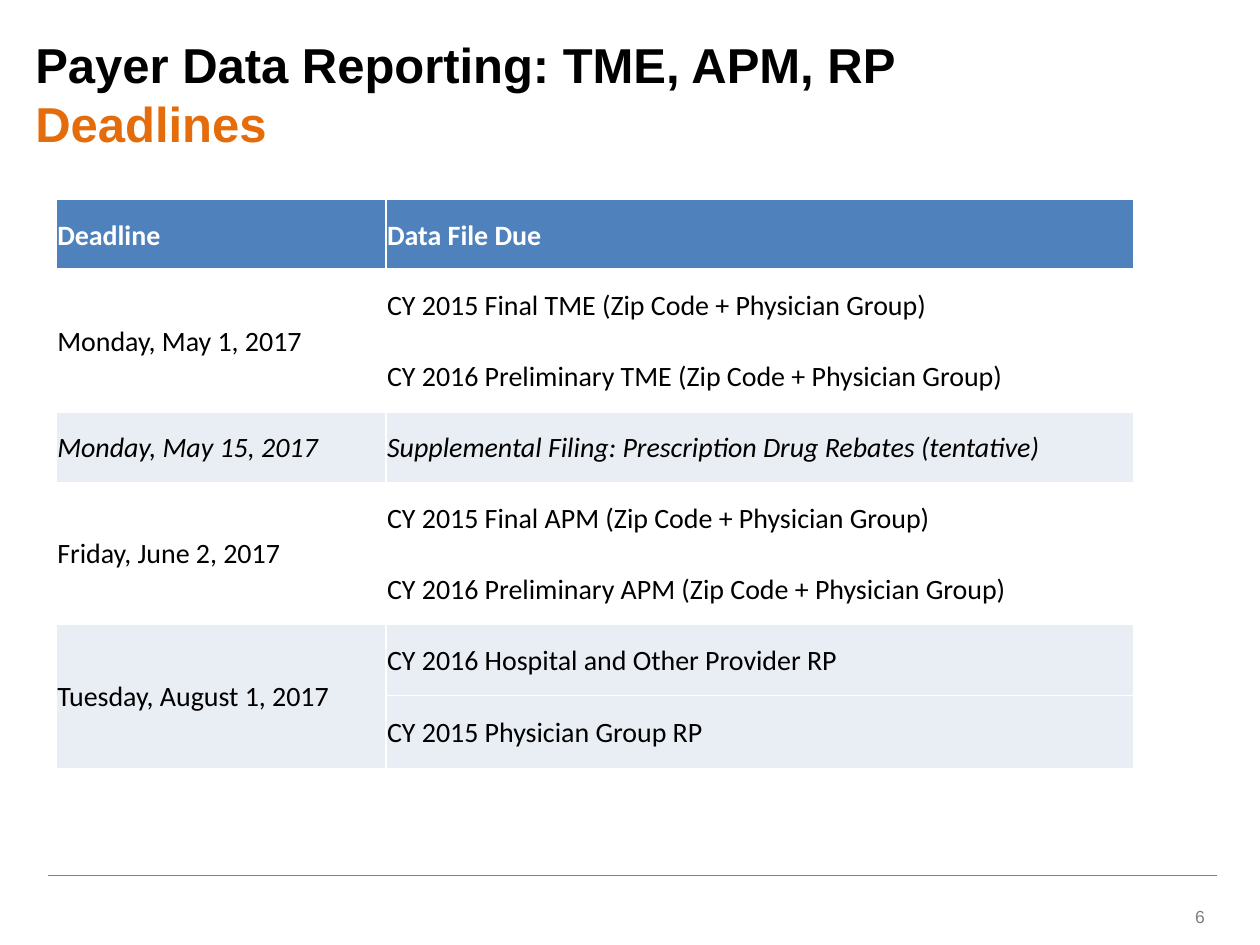
from lxml.etree import SubElement
from pptx import Presentation
from pptx.dml.color import RGBColor
from pptx.enum.shapes import MSO_CONNECTOR
from pptx.enum.text import MSO_ANCHOR, MSO_AUTO_SIZE, PP_ALIGN
from pptx.oxml.ns import qn
from pptx.util import Pt

COLORS = {
    "black": "000000",
    "white": "FFFFFF",
    "orange": "E46C0A",
    "header": "4F81BD",
    "band": "E9EDF4",
    "rule": "808080",
    "number": "7F7F7F",
}

# Each deadline: date, files due, italic
DEADLINES = [
    ("Monday, May 1, 2017",
     ["CY 2015 Final TME (Zip Code + Physician Group)",
      "CY 2016 Preliminary TME (Zip Code + Physician Group)"], False),
    ("Monday, May 15, 2017",
     ["Supplemental Filing: Prescription Drug Rebates (tentative)"], True),
    ("Friday, June 2, 2017",
     ["CY 2015 Final APM (Zip Code + Physician Group)",
      "CY 2016 Preliminary APM (Zip Code + Physician Group)"], False),
    ("Tuesday, August 1, 2017",
     ["CY 2016 Hospital and Other Provider RP",
      "CY 2015 Physician Group RP"], False),
]


def rgb(name):
    return RGBColor.from_string(COLORS[name])


def style_runs(p, font, size, color, bold=False, italic=False):
    for r in p.runs:
        r.font.name, r.font.size = font, Pt(size)
        r.font.bold, r.font.italic = bold, italic
        r.font.color.rgb = rgb(color)


def add_title(s, lines):
    sp = s.shapes.title
    sp.left, sp.top, sp.width, sp.height = Pt(13), Pt(28), Pt(611), Pt(50.5)
    tf = sp.text_frame
    tf.text = "\n".join(text for text, _ in lines)
    tf.word_wrap = True
    tf.auto_size = MSO_AUTO_SIZE.NONE
    tf.vertical_anchor = MSO_ANCHOR.MIDDLE
    for p, (_, color) in zip(tf.paragraphs, lines):
        p.alignment = PP_ALIGN.LEFT
        style_runs(p, "Arial", 28, color, bold=True)


def set_borders(cell, bottom):
    tcPr = cell._tc.get_or_add_tcPr()
    for side, width in (("L", 1), ("R", 1), ("T", 1), ("B", bottom)):
        ln = SubElement(tcPr, qn(f"a:ln{side}"), w=str(Pt(width)))
        fill = SubElement(ln, qn("a:solidFill"))
        SubElement(fill, qn("a:srgbClr"), val=COLORS["white"])


def fill_cell(cell, text, fill, color="black", bold=False, italic=False, bottom=1):
    cell.text = text
    cell.vertical_anchor = MSO_ANCHOR.MIDDLE
    cell.margin_left = cell.margin_right = cell.margin_top = Pt(0.75)
    cell.margin_bottom = 0
    set_borders(cell, bottom)
    cell.fill.solid()
    cell.fill.fore_color.rgb = rgb(fill)
    style_runs(cell.text_frame.paragraphs[0], "Calibri", 16, color, bold, italic)


def add_deadline_table(s):
    n_rows = 1 + sum(len(files) for _, files, _ in DEADLINES)
    table = s.shapes.add_table(n_rows, 2, Pt(32), Pt(114), Pt(616), Pt(325)).table
    table.columns[0].width, table.columns[1].width = Pt(188.5), Pt(427.5)
    for row in table.rows:
        row.height = Pt(40.5)
    table.rows[n_rows - 1].height = Pt(42)

    for col, text in enumerate(("Deadline", "Data File Due")):
        fill_cell(table.cell(0, col), text, "header", "white", bold=True, bottom=3)

    top = 1
    for i, (date, files, italic) in enumerate(DEADLINES):
        fill = "band" if i % 2 else "white"
        for j, name in enumerate(files):
            fill_cell(table.cell(top + j, 0), "" if j else date, fill, italic=italic)
            fill_cell(table.cell(top + j, 1), name, fill, italic=italic)
        if len(files) > 1:
            table.cell(top, 0).merge(table.cell(top + len(files) - 1, 0))
        top += len(files)


def add_rule(s):
    line = s.shapes.add_connector(MSO_CONNECTOR.STRAIGHT, Pt(27.5), Pt(500), Pt(695.5), Pt(500))
    line.line.color.rgb = rgb("rule")
    line.line.width = Pt(0.5)
    SubElement(line._element.spPr, qn("a:effectLst"))


def add_page_number(s, number):
    tf = s.shapes.add_textbox(Pt(528), Pt(509), Pt(167.5), Pt(29)).text_frame
    tf.text = number
    tf.word_wrap = True
    tf.vertical_anchor = MSO_ANCHOR.MIDDLE
    p = tf.paragraphs[0]
    p.alignment = PP_ALIGN.RIGHT
    style_runs(p, "Arial", 10, "number")


def main():
    prs = Presentation()
    prs.slide_width, prs.slide_height = Pt(720), Pt(540)
    s = prs.slides.add_slide(prs.slide_layouts[5])

    # Footer
    add_rule(s)
    add_page_number(s, "6")

    # Title and table
    add_title(s, [("Payer Data Reporting: TME, APM, RP", "black"), ("Deadlines", "orange")])
    add_deadline_table(s)

    prs.save("out.pptx")


if __name__ == "__main__":
    main()
